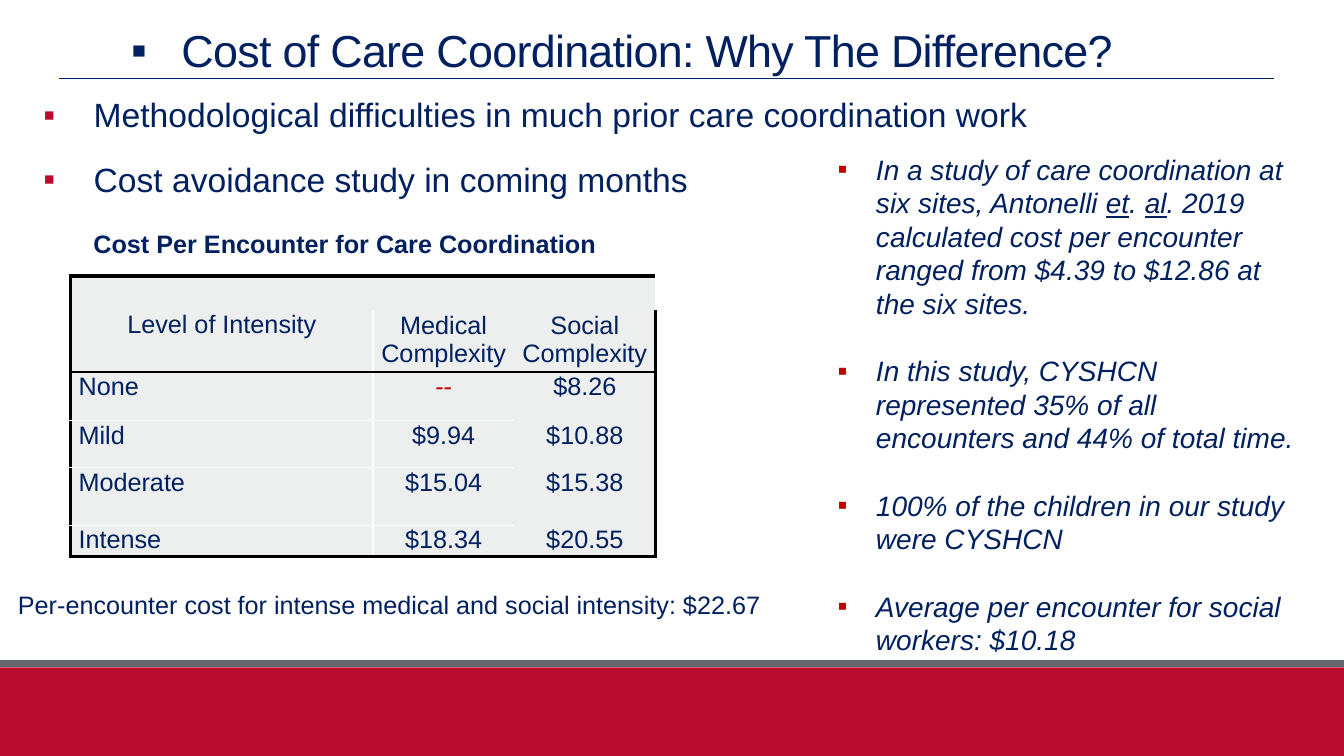
"""Build a slide on the cost of care coordination."""
from lxml.etree import SubElement
from pptx import Presentation
from pptx.dml.color import RGBColor
from pptx.enum.shapes import MSO_CONNECTOR as Connector, MSO_SHAPE as Shape
from pptx.enum.text import MSO_ANCHOR as Anchor, PP_ALIGN as Align
from pptx.oxml.ns import qn
from pptx.util import Inches, Pt

COLORS = {
    "navy": "002060", "red": "BA0C2F", "dark_red": "C00000", "gray": "63666A",
    "cell": "EDEEEE", "black": "000000", "white": "FFFFFF",
}
TITLE = "Cost of Care Coordination: Why The Difference?"
COSTS = [
    ("None", "--", "$8.26"),
    ("Mild", "$9.94", "$10.88"),
    ("Moderate", "$15.04", "$15.38"),
    ("Intense", "$18.34", "$20.55"),
]
COLUMN_WIDTHS = [3, 1.4, 1.4]
ROW_HEIGHTS = [0.34, 0.57, 0.48, 0.47, 0.57, 0.3]
FINDINGS = [
    ["In a study of care coordination at six sites, Antonelli ", "et", ". ", "al",
     ". 2019 calculated cost per encounter ranged from $4.39 to $12.86 at the six sites."],
    ["In this study, CYSHCN represented 35% of all encounters and 44% of total time."],
    ["100% of the children in our study were CYSHCN"],
    ["Average per encounter for social workers: $10.18"],
]
UNDERLINED = {"et", "al"}


def rgb(name):
    return RGBColor.from_string(COLORS[name])


def style(paragraph, size, color="navy", bold=False, italic=False):
    font = paragraph.font
    font.name, font.size = "Arial", Pt(size)
    font.bold, font.italic = bold, italic
    font.color.rgb = rgb(color)


def add_bullet(paragraph, indent, color):
    properties = paragraph._p.get_or_add_pPr()
    properties.set("marL", str(Inches(indent)))
    properties.set("indent", str(-Inches(indent)))
    bullet_color = SubElement(properties, qn("a:buClr"))
    SubElement(bullet_color, qn("a:srgbClr"), val=COLORS[color])
    SubElement(properties, qn("a:buFont"), typeface="Arial")
    SubElement(properties, qn("a:buChar"), char="▪")


def add_band(slide, top, height, color):
    shape = slide.shapes.add_shape(
        Shape.RECTANGLE, 0, Inches(top), Inches(13.33), Inches(height))
    shape.shadow.inherit = False
    shape.fill.solid()
    shape.fill.fore_color.rgb = rgb(color)
    shape.line.fill.background()


def add_title(slide):
    title = slide.shapes.title
    title.left, title.top = Inches(1.2), Inches(0.17)
    title.width, title.height = Inches(11), Inches(0.64)
    title.text_frame.vertical_anchor = Anchor.BOTTOM
    paragraph = title.text_frame.paragraphs[0]
    run = paragraph.add_run()
    run.text = TITLE
    run.font._element.set("spc", "-50")
    paragraph.alignment = Align.LEFT
    add_bullet(paragraph, 0.5, "navy")
    style(paragraph, 32)


def add_rule(slide):
    rule = slide.shapes.add_connector(
        Connector.STRAIGHT, Inches(0.59), Inches(0.78), Inches(12.64), Inches(0.78))
    rule.line.color.rgb = rgb("navy")
    rule.line.width = Pt(1)
    SubElement(rule._element.spPr, qn("a:effectLst"))


def add_text_box(slide, left, top, width, height):
    box = slide.shapes.add_textbox(Inches(left), Inches(top), Inches(width), Inches(height))
    box.text_frame.word_wrap = True
    return box.text_frame


def add_label(slide, text, left, top, width, alignment, bold=False):
    paragraph = add_text_box(slide, left, top, width, 0.4).paragraphs[0]
    paragraph.text = text
    paragraph.alignment = alignment
    style(paragraph, 18, bold=bold)


def add_main_points(slide):
    frame = add_text_box(slide, 0.43, 0.93, 12.54, 1.17)
    frame.margin_left = frame.margin_right = 0
    first, second = frame.paragraphs[0], frame.add_paragraph()
    first.text = "Methodological difficulties in much prior care coordination work"
    second.text = "Cost avoidance study in coming months"
    first.line_spacing, first.space_after = 0.9, Pt(2)
    second.line_spacing, second.space_before = 1.1, Pt(12)
    for paragraph in (first, second):
        add_bullet(paragraph, 0.5, "red")
        style(paragraph, 24)


def add_findings(slide):
    frame = add_text_box(slide, 8.21, 1.46, 4.78, 5.96)
    for index, parts in enumerate(FINDINGS):
        paragraph = frame.add_paragraph() if index else frame.paragraphs[0]
        for part in parts:
            run = paragraph.add_run()
            run.text = part
            if part in UNDERLINED:
                run.font.underline = True
        if index:
            paragraph.space_before = Pt(24)
        add_bullet(paragraph, 0.38, "dark_red")
        style(paragraph, 20, italic=True)


def cell_borders(row, column):
    """Return the side, color and width of each border of a cost table cell."""
    last_row, last_column = len(ROW_HEIGHTS) - 1, len(COLUMN_WIDTHS) - 1
    black, heading, white = ("black", 3), ("black", 2.25), ("white", 1)
    inner = white if column < last_column else None
    top = {0: black, 1: None, 2: heading}.get(row, inner)
    bottom = {0: None, 1: heading, last_row: black}.get(row, inner)
    left = {0: black, 1: white if row else None}.get(column)
    right = {0: white if row else None, last_column: black}.get(column)
    return {"lnL": left, "lnR": right, "lnT": top, "lnB": bottom}


def format_cell(cell, borders):
    properties = cell._tc.get_or_add_tcPr()
    for side, border in borders.items():
        line = SubElement(properties, qn(f"a:{side}"))
        if border:
            color, width = border
            line.set("w", str(Pt(width)))
            fill = SubElement(line, qn("a:solidFill"))
            SubElement(fill, qn("a:srgbClr"), val=COLORS[color])
        else:
            SubElement(line, qn("a:noFill"))
    cell.fill.solid()
    cell.fill.fore_color.rgb = rgb("cell")
    cell.margin_left = cell.margin_right = cell.margin_top = Inches(0.01)
    cell.margin_bottom = 0


def add_cost_table(slide):
    rows = [("Level of Intensity", "", ""),
            ("", "Medical Complexity", "Social Complexity"), *COSTS]
    frame = slide.shapes.add_table(
        len(rows), len(COLUMN_WIDTHS), Inches(0.7), Inches(2.74),
        Inches(sum(COLUMN_WIDTHS)), Inches(sum(ROW_HEIGHTS)))
    table = frame.table
    table.first_row = table.horz_banding = False
    for column, width in zip(table.columns, COLUMN_WIDTHS):
        column.width = Inches(width)
    for row, height in zip(table.rows, ROW_HEIGHTS):
        row.height = Inches(height)
    for row, texts in enumerate(rows):
        for column, text in enumerate(texts):
            cell = table.cell(row, column)
            format_cell(cell, cell_borders(row, column))
            paragraph = cell.text_frame.paragraphs[0]
            paragraph.text = text
            paragraph.alignment = Align.CENTER
            if row > 1 and column == 0:
                paragraph.alignment = Align.LEFT
                cell.margin_left = Inches(0.08)
            style(paragraph, 18, "dark_red" if text == "--" else "navy")
    table.cell(0, 0).merge(table.cell(1, 0))
    table.cell(0, 0).vertical_anchor = Anchor.MIDDLE
    table.cell(0, 1).merge(table.cell(0, 2))


def main():
    presentation = Presentation()
    presentation.slide_width, presentation.slide_height = Inches(13.33), Inches(7.5)
    slide = presentation.slides.add_slide(presentation.slide_layouts[5])
    add_band(slide, 6.62, 0.88, "red")
    add_band(slide, 6.55, 0.07, "gray")
    add_title(slide)
    add_rule(slide)
    add_main_points(slide)
    add_cost_table(slide)
    add_label(slide, "Cost Per Encounter for Care Coordination",
              0, 2.22, 6.84, Align.CENTER, bold=True)
    add_label(slide, "Per-encounter cost for intense medical and social intensity: $22.67",
              0.08, 5.8, 7.63, Align.LEFT)
    add_findings(slide)
    presentation.save("out.pptx")


if __name__ == "__main__":
    main()
